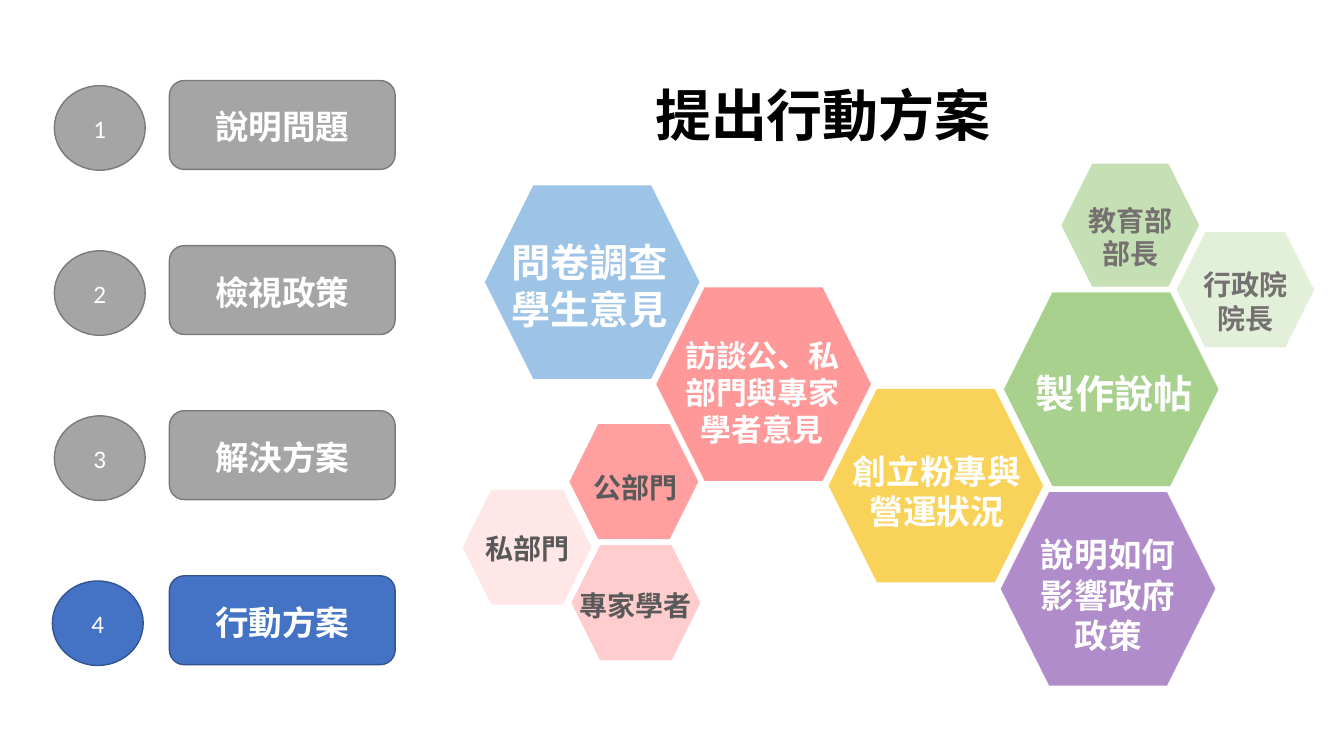
from dataclasses import dataclass

from lxml import etree
from pptx import Presentation
from pptx.dml.color import RGBColor
from pptx.enum.shapes import MSO_SHAPE
from pptx.enum.text import MSO_ANCHOR, PP_ALIGN
from pptx.oxml.ns import qn
from pptx.util import Cm, Pt

HEXAGON = MSO_SHAPE.HEXAGON
CIRCLE = MSO_SHAPE.FLOWCHART_CONNECTOR
ROUNDED = MSO_SHAPE.ROUNDED_RECTANGLE
MIDDLE = MSO_ANCHOR.MIDDLE
TOP = MSO_ANCHOR.TOP
CENTER = PP_ALIGN.CENTER
LEFT = PP_ALIGN.LEFT


@dataclass(frozen=True)
class Theme:
    heading_font: str = "Noto Sans CJK SC"
    number_font: str = "Calibri"
    black: str = "000000"
    white: str = "FFFFFF"
    dark_gray: str = "595959"
    warm_gray: str = "767171"
    step_fill: str = "A5A5A5"
    step_line: str = "7A7A7A"
    active_fill: str = "4472C4"
    active_line: str = "325491"
    blue: str = "9DC3E6"
    red: str = "FF9999"
    yellow: str = "F9D359"
    green: str = "A9D18E"
    purple: str = "B18CCA"
    public_red: str = "FF9F9F"
    expert_red: str = "FFCDCD"
    private_red: str = "FFE7E7"
    light_green: str = "C5E0B4"
    pale_green: str = "E2F0D9"
    title_size: int = 40
    large_size: int = 28
    medium_size: int = 24
    compact_size: int = 22
    small_size: int = 20
    number_size: int = 18


THEME = Theme()

STEPS = ["說明問題", "檢視政策", "解決方案", "行動方案"]
ACTIVE_STEP = 4

LARGE = (5.41, 4.88)
PINK = (3.25, 2.9)

ACTIONS = [
    ("問卷調查\n學生意見", (0.56, 0.53), LARGE, THEME.blue,
     (-0.25, 1.12, 5.79, 2.64), THEME.large_size, THEME.white, CENTER),
    ("訪談公、私部門與專家學者意見", (4.88, 3.1), LARGE, THEME.red,
     (0.13, 1.04, 5.08, 4.5), THEME.compact_size, THEME.white, CENTER),
    ("製作說帖", (13.64, 3.23), LARGE, THEME.green,
     (0.1, 1.73, 5.36, 2.21), THEME.large_size, THEME.white, CENTER),
    ("創立粉專與營運狀況", (9.22, 5.66), LARGE, THEME.yellow,
     (0.23, 1.35, 5, 3.07), THEME.medium_size, THEME.white, CENTER),
    ("說明如何\n影響政府\n政策", (13.56, 8.26), LARGE, THEME.purple,
     (-0.23, 0.86, 5.87, 3.33), THEME.medium_size, THEME.white, CENTER),
    ("公部門", (2.69, 6.55), PINK, THEME.public_red,
     (0.36, 0.97, 3.63, 1.12), THEME.small_size, THEME.dark_gray, LEFT),
    ("專家學者", (2.74, 9.6), PINK, THEME.expert_red,
     (-0.05, 0.91, 3.63, 1.12), THEME.small_size, THEME.dark_gray, LEFT),
    ("私部門", (0, 8.2), PINK, THEME.private_red,
     (0.33, 0.86, 3.63, 1.12), THEME.small_size, THEME.dark_gray, LEFT),
    ("行政院\n院長", (18.01, 1.73), (3.43, 2.87), THEME.pale_green,
     (-0.58, 0.69, 4.6, 2.64), THEME.small_size, THEME.warm_gray, CENTER),
    ("教育部\n部長", (15.11, 0), (3.43, 3.07), THEME.light_green,
     (-0.15, 0.79, 3.73, 1.96), THEME.small_size, THEME.warm_gray, CENTER),
]


def write(shape, text, size, color, alignment=CENTER, anchor=TOP, heading=True):
    frame = shape.text_frame
    frame.word_wrap = True
    frame.vertical_anchor = anchor
    frame.text = text
    if heading:
        frame.margin_top = Pt(3.6 + 0.09 * size)
    for paragraph in frame.paragraphs:
        paragraph.alignment = alignment
        if heading:
            paragraph.line_spacing = Pt(1.2 * size)
        for run in paragraph.runs:
            font = run.font
            font.size = Pt(size)
            font.bold = heading
            font.color.rgb = RGBColor.from_string(color)
            font.name = THEME.heading_font if heading else THEME.number_font
            if heading:
                east_asian = etree.SubElement(run._r.get_or_add_rPr(), qn("a:ea"))
                east_asian.set("typeface", THEME.heading_font)


def add_filled(shapes, kind, left, top, width, height, fill, line=None):
    shape = shapes.add_shape(kind, Cm(left), Cm(top), Cm(width), Cm(height))
    shape.shadow.inherit = False
    shape.fill.solid()
    shape.fill.fore_color.rgb = RGBColor.from_string(fill)
    if line:
        shape.line.color.rgb = RGBColor.from_string(line)
        shape.line.width = Pt(1)
    else:
        shape.line.fill.background()
    return shape


def add_label(shapes, text, left, top, width, height, size, color, alignment):
    label = shapes.add_textbox(Cm(left), Cm(top), Cm(width), Cm(height))
    write(label, text, size, color, alignment)


def add_steps(slide, left, top, pitch):
    shapes = slide.shapes.add_group_shape().shapes
    for number, name in enumerate(STEPS, start=1):
        active = number == ACTIVE_STEP
        fill = THEME.active_fill if active else THEME.step_fill
        line = THEME.active_line if active else THEME.step_line
        step_top = top + (number - 1) * pitch
        circle_left = left - 0.05 if active else left
        circle = add_filled(shapes, CIRCLE, circle_left, step_top + 0.13,
                            2.29, 2.13, fill, line)
        write(circle, str(number), THEME.number_size, THEME.white,
              anchor=MIDDLE, heading=False)
        button = add_filled(shapes, ROUNDED, left + 2.9, step_top,
                            5.69, 2.24, fill, line)
        write(button, name, THEME.medium_size, THEME.white, anchor=MIDDLE)


def add_actions(slide, left, top):
    shapes = slide.shapes.add_group_shape().shapes
    for text, (x, y), (width, height), fill, label, size, color, alignment in ACTIONS:
        hexagon_left, hexagon_top = left + x, top + y
        line = fill if fill in (THEME.light_green, THEME.pale_green) else None
        add_filled(shapes, HEXAGON, hexagon_left, hexagon_top,
                   width, height, fill, line)
        label_x, label_y, label_width, label_height = label
        add_label(shapes, text, hexagon_left + label_x, hexagon_top + label_y,
                  label_width, label_height, size, color, alignment)


def main():
    presentation = Presentation()
    presentation.slide_width = Cm(33.87)
    presentation.slide_height = Cm(19.05)
    slide = presentation.slides.add_slide(presentation.slide_layouts[6])
    add_steps(slide, left=1.37, top=2.03, pitch=4.16)
    add_label(slide.shapes, "提出行動方案", 16.26, 1.78, 13.82, 1.96,
              THEME.title_size, THEME.black, LEFT)
    add_actions(slide, left=11.66, top=4.14)
    presentation.save("out.pptx")


if __name__ == "__main__":
    main()
